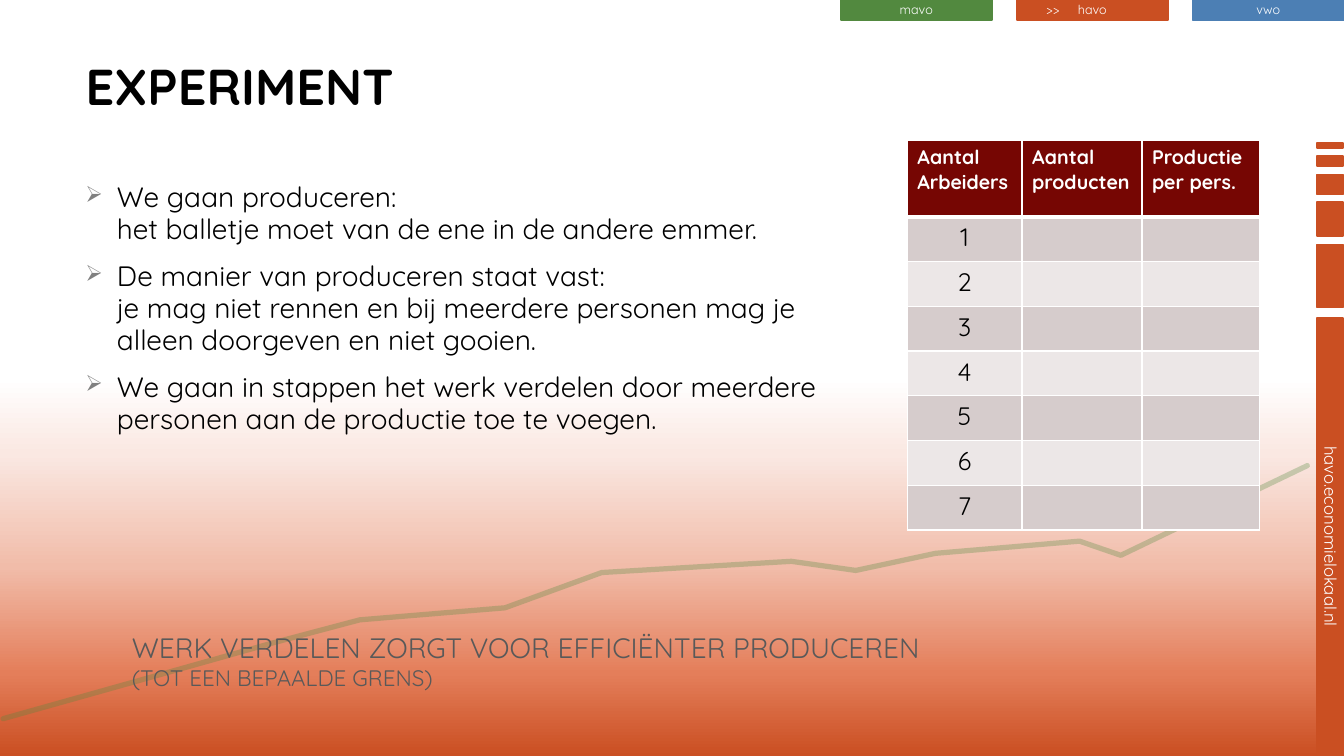
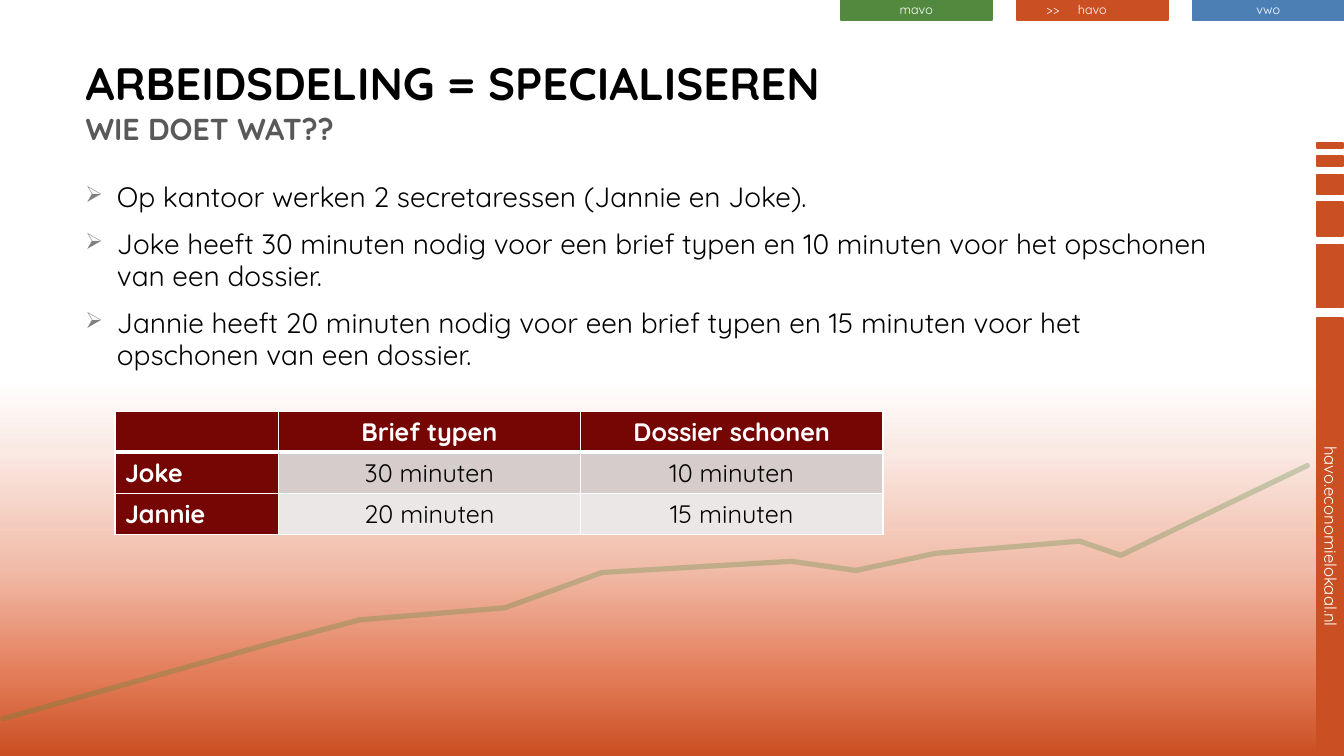
"""Build two lesson slides about the division of labour."""
from lxml import etree
from pptx import Presentation
from pptx.dml.color import RGBColor
from pptx.enum import shapes, text
from pptx.oxml import ns
from pptx.util import Pt

COLOURS = {
    "green": "52893F", "orange": "CA4F22", "blue": "4C7FB4", "maroon": "760603",
    "dark band": "D6CCCC", "light band": "ECE7E7", "white": "FFFFFF",
    "black": "000000", "grey": "595959", "bullet": "808080",
}
GRADIENT = [(0, "CA4F22"), (11, "E47E5A"), (25, "F1BCA9"), (40, "FAE8E2"), (50, "FFFFFF")]
TABS = [("mavo", "green"), ("havo", "orange"), ("vwo", "blue")]
BARS = [(227.2, 312, "havo.economielokaal.nl"), (174.6, 45, ""), (144.4, 24, ""),
        (124.6, 14.4, ""), (111.6, 7.2, ""), (101.9, 3.6, "")]
TREND = [(933.8, 332.6), (800.6, 396.7), (771.1, 386.6), (668.2, 395.3), (611.3, 407.5),
         (565.2, 401), (429.8, 409), (360.7, 434.2), (257, 442.8), (194.4, 459.4), (2.2, 513.4)]
BULLET_FORMAT = {"line_spacing": 0.95, "space_after": Pt(6)}

SLIDES = [
    {
        "title": [("EXPERIMENT", 36, "black", True)],
        "body width": 566.6,
        "bullets": [
            "We gaan produceren:\nhet balletje moet van de ene in de andere emmer.",
            "De manier van produceren staat vast:\nje mag niet rennen en bij meerdere personen "
            "mag je alleen doorgeven en niet gooien.",
            "We gaan in stappen het werk verdelen door meerdere personen aan de productie "
            "toe te voegen.",
        ],
        "table": {
            "at": (648, 100.1), "columns": [82, 85.7, 84.2], "heights": [54.7] + [32] * 7,
            "header size": 14, "header align": text.PP_ALIGN.LEFT, "row headings": False,
            "rows": [["Aantal\nArbeiders", "Aantal producten", "Productie per pers."]]
            + [[str(number), "", ""] for number in range(1, 8)],
        },
        "conclusion": [("WERK VERDELEN ZORGT VOOR EFFICIËNTER PRODUCEREN\n", 20, "grey", False),
                       ("(TOT EEN BEPAALDE GRENS)", 16, "grey", False)],
    },
    {
        "title": [("ARBEIDSDELING = SPECIALISEREN\n", 32.4, "black", True),
                  ("WIE DOET WAT??", 21.6, "grey", True)],
        "body width": 823.7,
        "bullets": [
            "Op kantoor werken 2 secretaressen (Jannie en Joke).",
            "Joke heeft 30 minuten nodig voor een brief typen en 10 minuten voor het "
            "opschonen van een dossier.",
            "Jannie heeft 20 minuten nodig voor een brief typen en 15 minuten voor het "
            "opschonen van een dossier.",
        ],
        "table": {
            "at": (82.1, 293.8), "columns": [116.6, 216, 216], "heights": [29.3] * 3,
            "header size": 18, "header align": text.PP_ALIGN.CENTER, "row headings": True,
            "rows": [["", "Brief typen", "Dossier schonen"],
                     ["Joke", "30 minuten", "10 minuten"],
                     ["Jannie", "20 minuten", "15 minuten"]],
        },
        "conclusion": [],
    },
]


def colour(name):
    """Return a named colour."""
    return RGBColor.from_string(COLOURS[name])


def write(para, spans):
    """Add spans of (words, size, colour, bold) to a paragraph, with line breaks at newlines."""
    for words, size, shade, bold in spans:
        for number, line in enumerate(words.split("\n")):
            if number:
                para.add_line_break()
            if line:
                span = para.add_run()
                span.text = line
                for key, value in {"name": "Quicksand", "size": Pt(size), "bold": bold}.items():
                    setattr(span.font, key, value)
                span.font.color.rgb = colour(shade)


deck = Presentation()
deck.slide_width, deck.slide_height = Pt(960), Pt(540)

backdrop = deck.slide_master.background.fill
backdrop.gradient()
backdrop.gradient_angle = 90
stops = next(deck.slide_master.element.iter(ns.qn("a:gsLst")))
for stop in list(stops):
    stops.remove(stop)
for position, shade in GRADIENT:
    stop = etree.SubElement(stops, ns.qn("a:gs"), pos=str(position * 1000))
    etree.SubElement(stop, ns.qn("a:srgbClr"), val=shade)

for content in SLIDES:
    page = deck.slides.add_slide(deck.slide_layouts[6])

    blocks = [(600.5 + 125.7 * number, 0, 108, 14.4, 0, label, 9, shade)
              for number, (label, shade) in enumerate(TABS)]
    blocks += [(950 - length / 2, top + length / 2 - 9.4, length, 18.8, 90, label, 12, "orange")
               for top, length, label in BARS]
    for left, top, width, height, turn, label, size, shade in blocks:
        block = page.shapes.add_shape(
            shapes.MSO_SHAPE.RECTANGLE, Pt(left), Pt(top), Pt(width), Pt(height))
        block.rotation = turn
        block.shadow.inherit = False
        block.fill.solid()
        block.fill.fore_color.rgb = block.line.color.rgb = colour(shade)
        block.line.width = Pt(1.25)
        if label:
            frame = block.text_frame
            for key, value in {"margin_top": 0, "margin_bottom": Pt(1.4),
                               "vertical_anchor": text.MSO_ANCHOR.MIDDLE}.items():
                setattr(frame, key, value)
            frame.paragraphs[0].alignment = text.PP_ALIGN.CENTER
            write(frame.paragraphs[0], [(label, size, "white", False)])

    points = [(Pt(x), Pt(y)) for x, y in TREND]
    outline = page.shapes.build_freeform(*points[0])
    outline.add_line_segments(points[1:], close=False)
    trend = outline.convert_to_shape()
    trend.shadow.inherit = False
    trend.fill.background()
    trend.line.color.rgb = colour("green")
    trend.line.width = Pt(3.75)
    stroke = trend.line._get_or_add_ln()
    stroke.set("cap", "rnd")
    etree.SubElement(next(stroke.iter(ns.qn("a:srgbClr"))), ns.qn("a:alpha"), val="30000")

    marker = page.shapes.add_textbox(Pt(740.2), Pt(-2.2), Pt(26), Pt(18)).text_frame
    marker.word_wrap = False
    write(marker.paragraphs[0], [(">>", 9, "white", False)])

    title = page.shapes.add_textbox(Pt(54), Pt(36), Pt(722), Pt(64)).text_frame
    title.word_wrap = True
    write(title.paragraphs[0], content["title"])

    body = page.shapes.add_textbox(
        Pt(54), Pt(126.7), Pt(content["body width"]), Pt(370)).text_frame
    body.word_wrap = True
    for number, words in enumerate(content["bullets"]):
        para = body.add_paragraph() if number else body.paragraphs[0]
        properties = para._p.get_or_add_pPr()
        properties.set("marL", str(Pt(22.5)))
        properties.set("indent", str(-Pt(22.5)))
        tint = etree.SubElement(properties, ns.qn("a:buClr"))
        etree.SubElement(tint, ns.qn("a:srgbClr"), val=COLOURS["bullet"])
        etree.SubElement(properties, ns.qn("a:buSzPct"), val="80000")
        etree.SubElement(properties, ns.qn("a:buChar"), char="➢")
        for key, value in BULLET_FORMAT.items():
            setattr(para, key, value)
        if number:
            para.space_before = Pt(4.5)
        write(para, [(words, 20, "black", False)])

    plan = content["table"]
    left, top = plan["at"]
    holder = page.shapes.add_table(
        len(plan["heights"]), len(plan["columns"]), Pt(left), Pt(top),
        Pt(sum(plan["columns"])), Pt(sum(plan["heights"])))
    table = holder.table
    for column, width in zip(table.columns, plan["columns"]):
        column.width = Pt(width)
    for row, height in zip(table.rows, plan["heights"]):
        row.height = Pt(height)
    for r, values in enumerate(plan["rows"]):
        for c, value in enumerate(values):
            cell = table.cell(r, c)
            row_heading = plan["row headings"] and c == 0 and r > 0
            heading = r == 0 or row_heading
            properties = cell._tc.get_or_add_tcPr()
            for side in "LRTB":
                thick = (r, side) in [(0, "B"), (1, "T")]
                border = etree.SubElement(
                    properties, ns.qn("a:ln" + side), w=str(Pt(3 if thick else 1)))
                paint = etree.SubElement(border, ns.qn("a:solidFill"))
                etree.SubElement(paint, ns.qn("a:srgbClr"), val=COLOURS["white"])
            cell.fill.solid()
            band = "dark band" if r % 2 else "light band"
            cell.fill.fore_color.rgb = colour("maroon" if heading else band)
            align = plan["header align"] if r == 0 else text.PP_ALIGN.CENTER
            size = plan["header size"] if r == 0 else 18
            for number, line in enumerate(value.split("\n")):
                para = cell.text_frame.add_paragraph() if number else cell.text_frame.paragraphs[0]
                para.alignment = text.PP_ALIGN.LEFT if row_heading else align
                write(para, [(line, size, "white" if heading else "black", heading)])

    if content["conclusion"]:
        conclusion = page.shapes.add_textbox(Pt(87.1), Pt(378), Pt(671.8), Pt(118.8)).text_frame
        conclusion.word_wrap = True
        conclusion.vertical_anchor = text.MSO_ANCHOR.BOTTOM
        write(conclusion.paragraphs[0], content["conclusion"])

deck.save("out.pptx")
